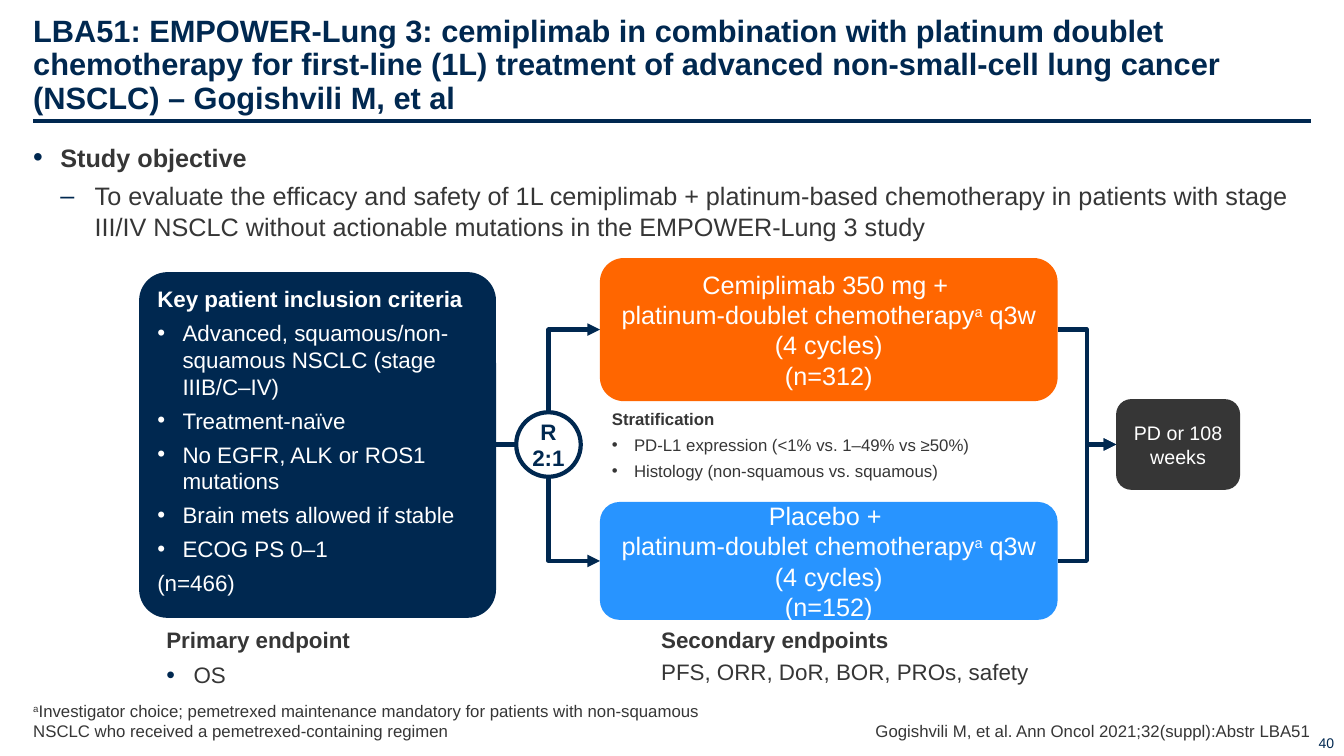
from lxml import etree
from pptx import Presentation
from pptx.dml.color import RGBColor
from pptx.enum.shapes import MSO_CONNECTOR as LINK, MSO_SHAPE as SHAPE
from pptx.enum.text import MSO_ANCHOR as ANCHOR, PP_ALIGN as ALIGN
from pptx.oxml.ns import qn
from pptx.util import Inches, Pt


class Theme:
    font = "Arial"
    navy, grey, white = "002850", "363636", "FFFFFF"
    orange, blue = "FF6600", "2894FF"
    title, body, panel, small, note, page = 22, 18, 16, 14, 12, 10
    rule, arrow = 2.25, 3


# Content: a line is a string or a dict with its own format; ^a^ is superscript
TITLE = ("LBA51: EMPOWER-Lung 3: cemiplimab in combination with platinum doublet "
         "chemotherapy for first-line (1L) treatment of advanced non-small-cell lung "
         "cancer (NSCLC) – Gogishvili M, et al")
OBJECTIVE = [
    dict(text="Study objective", bold=True, bullet="•", indent=0.27, bullet_size=110),
    dict(text="To evaluate the efficacy and safety of 1L cemiplimab + platinum-based "
              "chemotherapy in patients with stage III/IV NSCLC without actionable "
              "mutations in the EMPOWER-Lung 3 study",
         bullet="–", left=0.61, indent=0.34),
]
CRITERIA_TITLE = "Key patient inclusion criteria"
CRITERIA = [
    "Advanced, squamous/non-squamous NSCLC (stage IIIB/C–IV)",
    "Treatment-naïve",
    "No EGFR, ALK or ROS1 mutations",
    "Brain mets allowed if stable",
    "ECOG PS 0–1",
]
ENROLLED = "(n=466)"
RANDOMISATION = ["R", "2:1"]
ARMS = [  # lines, fill, top, height
    (["Cemiplimab 350 mg + \nplatinum-doublet chemotherapy^a^ q3w (4 cycles)", "(n=312)"],
     Theme.orange, 2.56, 1.42),
    (["Placebo + \nplatinum-doublet chemotherapy^a^ q3w\n(4 cycles)", "(n=152)"],
     Theme.blue, 4.98, 1.17),
]
STRATIFICATION = ["PD-L1 expression (<1% vs. 1–49% vs ≥50%)",
                  "Histology (non-squamous vs. squamous)"]
FOLLOW_UP = "PD or 108 weeks"
PRIMARY = [dict(text="Primary endpoint", bold=True),
           dict(text="OS", bullet="•", indent=0.27, bullet_size=110)]
SECONDARY = [dict(text="Secondary endpoints", bold=True),
             dict(text="PFS, ORR, DoR, BOR, PROs, safety", before=3.5)]
FOOTNOTE = ("^a^Investigator choice; pemetrexed maintenance mandatory for patients with "
            "non-squamous NSCLC who received a pemetrexed-containing regimen")
CITATION = "Gogishvili M, et al. Ann Oncol 2021;32(suppl):Abstr LBA51"
PAGE = "40"

prs = Presentation()
prs.slide_width, prs.slide_height = Inches(13.33), Inches(7.5)
slide = prs.slides.add_slide(prs.slide_layouts[6])


def rgb(value):
    return RGBColor.from_string(value)


def add_bullet(paragraph, char, color, size, left, indent):
    props = paragraph._p.get_or_add_pPr()
    props.set("marL", str(Inches(left)))
    props.set("indent", str(-Inches(indent)))
    tint = etree.SubElement(props, qn("a:buClr"))
    etree.SubElement(tint, qn("a:srgbClr")).set("val", color)
    etree.SubElement(props, qn("a:buSzPct")).set("val", str(size * 1000))
    etree.SubElement(props, qn("a:buFont")).set("typeface", Theme.font)
    etree.SubElement(props, qn("a:buChar")).set("char", char)


def add_runs(paragraph, text):
    for i, part in enumerate(text.split("^")):
        for j, piece in enumerate(part.split("\n")):
            if j:
                paragraph.add_line_break()
            if piece:
                run = paragraph.add_run()
                run.text = piece
                if i % 2:
                    run._r.get_or_add_rPr().set("baseline", "30000")


def write(holder, lines, size, color=Theme.grey, bold=False, align=ALIGN.LEFT,
          anchor=ANCHOR.TOP, insets=(0.1, 0.05, 0.1, 0.05), after=0, spacing=1.0,
          bullet_color=Theme.navy, wrap=True):
    frame = holder.text_frame
    frame.word_wrap, frame.vertical_anchor = wrap, anchor
    (frame.margin_left, frame.margin_top,
     frame.margin_right, frame.margin_bottom) = map(Inches, insets)
    for i, line in enumerate(lines):
        line = dict(text=line) if isinstance(line, str) else line
        paragraph = frame.add_paragraph() if i else frame.paragraphs[0]
        paragraph.alignment, paragraph.line_spacing = align, spacing
        paragraph.space_before = Pt(line.get("before", 0))
        paragraph.space_after = Pt(after)
        if "bullet" in line:
            indent = line["indent"]
            add_bullet(paragraph, line["bullet"], bullet_color,
                       line.get("bullet_size", 100), line.get("left", indent), indent)
        font = paragraph.font
        font.name, font.size = Theme.font, Pt(size)
        font.bold, font.color.rgb = line.get("bold", bold), rgb(color)
        add_runs(paragraph, line["text"])


def add_text(box, lines, size, **style):
    write(slide.shapes.add_textbox(*map(Inches, box)), lines, size, **style)


def add_box(kind, box, fill=None, corner=None):
    shape = slide.shapes.add_shape(kind, *map(Inches, box))
    shape.shadow.inherit = False
    if corner:
        shape.adjustments[0] = corner
    if fill:
        shape.fill.solid()
        shape.fill.fore_color.rgb = rgb(fill)
        shape.line.fill.background()
    else:
        shape.fill.background()
        shape.line.color.rgb, shape.line.width = rgb(Theme.navy), Pt(Theme.arrow)
    return shape


def add_link(kind, start, end, width=Theme.arrow, arrow=False):
    link = slide.shapes.add_connector(kind, *map(Inches, (*start, *end)))
    link.line.color.rgb, link.line.width = rgb(Theme.navy), Pt(width)
    if arrow:
        etree.SubElement(link.line._get_or_add_ln(), qn("a:tailEnd")).set("type", "triangle")
    etree.SubElement(link._element.spPr, qn("a:effectLst"))
    return link


def add_corner_arrow(start, end):
    """One-bend arrow that leaves vertically and arrives from the left."""
    (x1, y1), (x2, y2) = start, end
    rising = y2 < y1
    mid_x, mid_y = (x1 + x2) / 2, (y1 + y2) / 2
    half_w, half_h = abs(y2 - y1) / 2, (x2 - x1) / 2
    turn = half_h if rising else -half_h
    link = add_link(LINK.ELBOW, (mid_x + half_w, mid_y + turn),
                    (mid_x - half_w, mid_y - turn), arrow=True)
    props = link._element.spPr
    props.find(qn("a:xfrm")).set("rot", str((90 if rising else 270) * 60000))
    props.find(qn("a:prstGeom")).set("prst", "bentConnector2")


# Title, rule and objective
LEFT, RIGHT = 0.33, 13
add_link(LINK.STRAIGHT, (LEFT, 1.2), (RIGHT, 1.2), Theme.rule)
add_text((LEFT, 0.12, RIGHT - LEFT, 1.03), [TITLE], Theme.title, color=Theme.navy,
         bold=True, anchor=ANCHOR.BOTTOM, insets=(0, 0.05, 0, 0), spacing=0.9)
add_text((LEFT, 1.36, 12.47, 1.2), OBJECTIVE, Theme.body, insets=(0, 0.05, 0, 0.05), after=6)

# Patients and randomisation
MIDDLE = 4.41
patients = add_box(SHAPE.ROUNDED_RECTANGLE, (1.38, 2.7, 3.54, 3.43), Theme.navy, 0.082)
write(patients,
      [dict(text=CRITERIA_TITLE, bold=True),
       *(dict(text=item, bullet="•", indent=0.25) for item in CRITERIA), ENROLLED],
      Theme.panel, color=Theme.white, bullet_color=Theme.white, after=5)
R_X, R_SIZE = 5.44, 0.64
R_LEFT, R_TOP = R_X - R_SIZE / 2, MIDDLE - R_SIZE / 2
add_link(LINK.STRAIGHT, (4.92, MIDDLE), (R_LEFT, MIDDLE))
write(add_box(SHAPE.OVAL, (R_LEFT, R_TOP, R_SIZE, R_SIZE)), RANDOMISATION, Theme.panel,
      color=Theme.navy, bold=True, align=ALIGN.CENTER, anchor=ANCHOR.MIDDLE, wrap=False)

# Treatment arms and follow-up
ARM_X, ARM_W, FOLLOW_X = 5.95, 4.54, 11.07
boxed = dict(color=Theme.white, align=ALIGN.CENTER, anchor=ANCHOR.MIDDLE,
             insets=(0.1, 0, 0.1, 0))
follow_up = add_box(SHAPE.ROUNDED_RECTANGLE, (FOLLOW_X, 3.96, 1.23, 0.9), Theme.grey, 0.167)
write(follow_up, [FOLLOW_UP], Theme.small, **boxed)
for treatment, fill, top, height in ARMS:
    arm = add_box(SHAPE.ROUNDED_RECTANGLE, (ARM_X, top, ARM_W, height), fill, 0.167)
    write(arm, treatment, Theme.body, **boxed)
    arm_y = top + height / 2
    r_edge = R_TOP if arm_y < MIDDLE else R_TOP + R_SIZE
    add_corner_arrow((R_X, r_edge), (ARM_X, arm_y))
    add_link(LINK.ELBOW, (ARM_X + ARM_W, arm_y), (FOLLOW_X, MIDDLE), arrow=True)
add_text((5.97, 4.01, 4.56, 0.98),
         [dict(text="Stratification", bold=True),
          *(dict(text=item, bullet="•", indent=0.22) for item in STRATIFICATION)],
         Theme.note, bullet_color=Theme.grey, after=4)

# Endpoints
add_text((1.65, 6.16, 4.67, 0.81), PRIMARY, Theme.panel, insets=(0, 0.05, 0, 0.05), after=6)
add_text((6.46, 6.16, 4.67, 0.81), SECONDARY, Theme.panel)

# Footer
footer = dict(anchor=ANCHOR.BOTTOM, insets=(0, 0, 0, 0))
add_text((LEFT, 6.82, 7.07, 0.53), [FOOTNOTE], Theme.note, **footer)
add_text((6.98, 7.13, 6.02, 0.22), [CITATION], Theme.note, align=ALIGN.RIGHT, **footer)
add_text((12.68, 7.1, 0.65, 0.4), [PAGE], Theme.page, color=Theme.navy,
         align=ALIGN.RIGHT, anchor=ANCHOR.BOTTOM)

prs.save("out.pptx")
